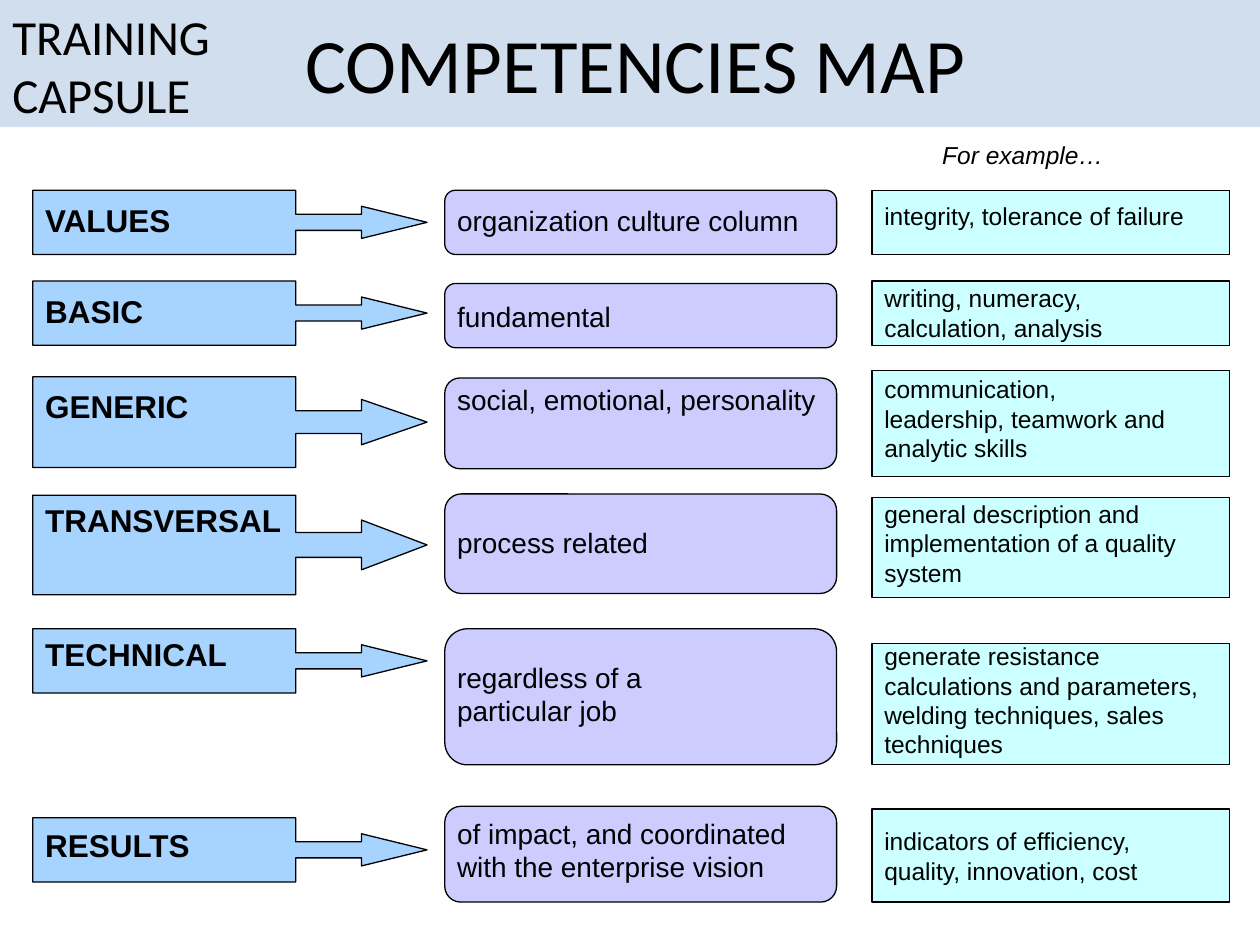
from pptx import Presentation
from pptx.dml.color import RGBColor
from pptx.enum.shapes import MSO_SHAPE
from pptx.enum.text import MSO_ANCHOR, PP_ALIGN
from pptx.util import Inches, Pt

BLACK = RGBColor(0x00, 0x00, 0x00)
BAND = RGBColor(0xD1, 0xDE, 0xED)
BLUE = RGBColor(0xA7, 0xD3, 0xFF)
LILAC = RGBColor(0xCC, 0xCC, 0xFF)
AQUA = RGBColor(0xCC, 0xFF, 0xFF)

LABEL = {"name": "Arial", "size": Pt(18), "bold": True}
MEANING = {"name": "Arial", "size": Pt(16)}
EXAMPLE = {"name": "Arial", "size": Pt(14)}
NOTE = {"name": "Arial", "size": Pt(14), "italic": True}
TITLE = {"name": "Calibri", "size": Pt(44)}
CORNER = {"name": "Calibri", "size": Pt(28)}

HEAD_LENGTH = 0.52

# Each row: (box top, box height, text top, text width, text)
COMPETENCIES = [
    (1.51, 0.51, 1.55, 1.53, "VALUES"),
    (2.23, 0.51, 2.27, 1.15, "BASIC"),
    (2.99, 0.72, 3.02, 1.53, "GENERIC"),
    (3.93, 0.79, 3.93, 2.53, "TRANSVERSAL"),
    (4.99, 0.51, 4.99, 1.92, "TECHNICAL"),
    (6.49, 0.51, 6.51, 1.92, "RESULTS"),
]
MEANINGS = [
    (1.51, 0.51, 1.57, 3.4, "organization culture column"),
    (2.25, 0.51, 2.33, 3.11, "fundamental"),
    (3.0, 0.72, 2.99, 3.4, "social, emotional, personality"),
    (3.92, 0.79, 4.12, 3.11, "process related"),
    (4.99, 1.08, 5.19, 2.37, "regardless of a particular job"),
    (6.4, 0.76, 6.43, 2.84, "of impact, and coordinated with the enterprise vision"),
]
EXAMPLES = [
    (1.51, 0.51, 1.55, 2.84, "integrity, tolerance of failure"),
    (2.23, 0.51, 2.2, 2.53, "writing, numeracy, calculation, analysis"),
    (2.94, 0.84, 2.92, 2.53, "communication, leadership, teamwork and analytic skills"),
    (3.95, 0.79, 3.91, 2.84, "general description and implementation of a quality system"),
    (5.11, 0.96, 5.04, 2.84, "generate resistance calculations and parameters, "
                             "welding techniques, sales techniques"),
    (6.42, 0.74, 6.51, 2.53, "indicators of efficiency, quality, innovation, cost"),
]


def add_box(slide, kind, box, fill, outlined=True):
    sp = slide.shapes.add_shape(kind, *map(Inches, box))
    sp.shadow.inherit = False
    sp.fill.solid()
    sp.fill.fore_color.rgb = fill
    if outlined:
        sp.line.color.rgb = BLACK
        sp.line.width = Pt(0.75)
    else:
        sp.line.fill.background()
    return sp


def add_text(slide, box, text, style):
    tf = slide.shapes.add_textbox(*map(Inches, box)).text_frame
    tf.word_wrap = True
    r = tf.paragraphs[0].add_run()
    r.text = text
    for attr, value in style.items():
        setattr(r.font, attr, value)
    r.font.color.rgb = BLACK
    return tf


def add_header(slide, left, top, width, height):
    add_box(slide, MSO_SHAPE.RECTANGLE, (left, top, width, height), BAND, outlined=False)
    tf = add_text(slide, (left + 1.49, top + 0.14, 7.01, 0.87), "COMPETENCIES MAP", TITLE)
    tf.vertical_anchor = MSO_ANCHOR.MIDDLE
    tf.margin_left = Inches(0.19)
    tf.margin_right = Inches(0.09)
    p = tf.paragraphs[0]
    p.alignment = PP_ALIGN.CENTER
    p.line_spacing = 0.75
    add_text(slide, (left, top, 3.25, 1.04), "TRAINING CAPSULE", CORNER)


def add_column(slide, left, width, rows, kind, fill, style):
    for top, height, text_top, text_width, text in rows:
        sp = add_box(slide, kind, (left, top, width, height), fill)
        if kind == MSO_SHAPE.RIGHT_ARROW_CALLOUT:
            for i, value in enumerate((0.25, 0.25, HEAD_LENGTH / height, 0.667)):
                sp.adjustments[i] = value
        add_text(slide, (left, text_top, text_width, 0.4), text, style)


def main():
    prs = Presentation()
    prs.slide_width, prs.slide_height = Inches(10), Inches(7.5)
    slide = prs.slides.add_slide(prs.slide_layouts[6])
    add_header(slide, 0, 0, 10, 1.01)
    add_text(slide, (7.38, 1.06, 2.07, 0.33), "For example…", NOTE)
    add_column(slide, 6.92, 2.84, EXAMPLES, MSO_SHAPE.RECTANGLE, AQUA, EXAMPLE)
    add_column(slide, 3.53, 3.11, MEANINGS, MSO_SHAPE.ROUNDED_RECTANGLE, LILAC, MEANING)
    add_column(slide, 0.26, 3.13, COMPETENCIES, MSO_SHAPE.RIGHT_ARROW_CALLOUT, BLUE, LABEL)
    prs.save("out.pptx")


if __name__ == "__main__":
    main()
